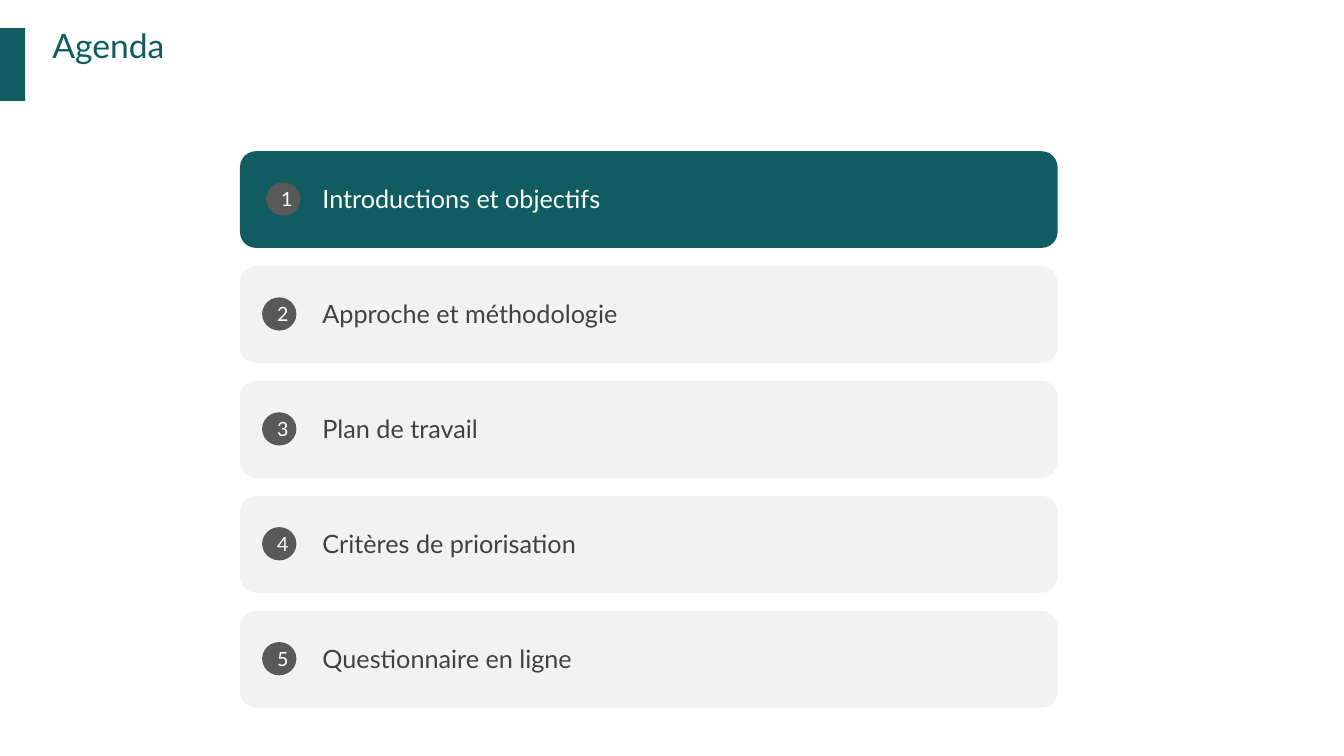
from pptx import Presentation
from pptx.dml.color import RGBColor
from pptx.enum.shapes import MSO_SHAPE
from pptx.enum.text import MSO_ANCHOR, MSO_AUTO_SIZE, PP_ALIGN
from pptx.util import Inches, Pt

COLORS = {
    "teal": "0F5D61",
    "light": "F2F2F2",
    "badge": "595959",
    "text": "414141",
    "white": "FFFFFF",
}
FONT = "Lato"
TOPICS = [
    "Introductions et objectifs",
    "Approche et méthodologie",
    "Plan de travail",
    "Critères de priorisation",
    "Questionnaire en ligne",
]
ACTIVE = 1
ROW_HEIGHT, ROW_PITCH = 0.96, 1.14


def color(name):
    return RGBColor.from_string(COLORS[name])


def place(sp, x, y, w, h):
    sp.left, sp.top, sp.width, sp.height = map(Inches, (x, y, w, h))


def add_block(s, kind, x, y, w, h, fill):
    sp = s.shapes.add_shape(kind, Inches(x), Inches(y), Inches(w), Inches(h))
    sp.shadow.inherit = False
    sp.fill.solid()
    sp.fill.fore_color.rgb = color(fill)
    sp.line.fill.background()
    return sp


def write(tf, text, size, font_color, align=PP_ALIGN.LEFT):
    tf.text = text
    tf.word_wrap = True
    p = tf.paragraphs[0]
    p.alignment = align
    p.font.name = FONT
    p.font.size = Pt(size)
    p.font.color.rgb = color(font_color)


def add_header(s, x, y, w, h):
    """Place the title and the accent bar at the slide's left edge."""
    add_block(s, MSO_SHAPE.RECTANGLE, -0.01, y + 0.03, 0.26, 0.72, "teal")
    title = s.shapes.title
    place(title, x, y, w, h)
    tf = title.text_frame
    tf.margin_left = tf.margin_top = tf.margin_right = tf.margin_bottom = 0
    tf.vertical_anchor = MSO_ANCHOR.TOP
    tf.auto_size = MSO_AUTO_SIZE.NONE
    write(tf, "Agenda", 24, "teal")


def add_topic(s, x, y, w, h, number, topic):
    active = number == ACTIVE
    add_block(s, MSO_SHAPE.ROUNDED_RECTANGLE, x, y, w, h,
              "teal" if active else "light")

    badge_x = x + (0.26 if active else 0.22)
    badge = add_block(s, MSO_SHAPE.OVAL, badge_x, y + 0.31, 0.34, 0.33, "badge")
    badge.text_frame.vertical_anchor = MSO_ANCHOR.MIDDLE
    write(badge.text_frame, str(number), 14, "white", PP_ALIGN.CENTER)

    label = s.shapes.add_textbox(Inches(x + 0.72), Inches(y + 0.27),
                                 Inches(w - 1.18), Inches(0.4))
    label.text_frame.auto_size = MSO_AUTO_SIZE.SHAPE_TO_FIT_TEXT
    write(label.text_frame, topic, 18, "white" if active else "text")


def add_agenda(s, x, y, w):
    for i, topic in enumerate(TOPICS):
        add_topic(s, x, y + i * ROW_PITCH, w, ROW_HEIGHT, i + 1, topic)


def main():
    prs = Presentation()
    prs.slide_width, prs.slide_height = Inches(13.33), Inches(7.5)
    s = prs.slides.add_slide(prs.slide_layouts[5])
    add_header(s, 0.52, 0.25, 12.55, 0.8)
    add_agenda(s, 2.38, 1.5, 8.11)
    prs.save("out.pptx")


if __name__ == "__main__":
    main()
